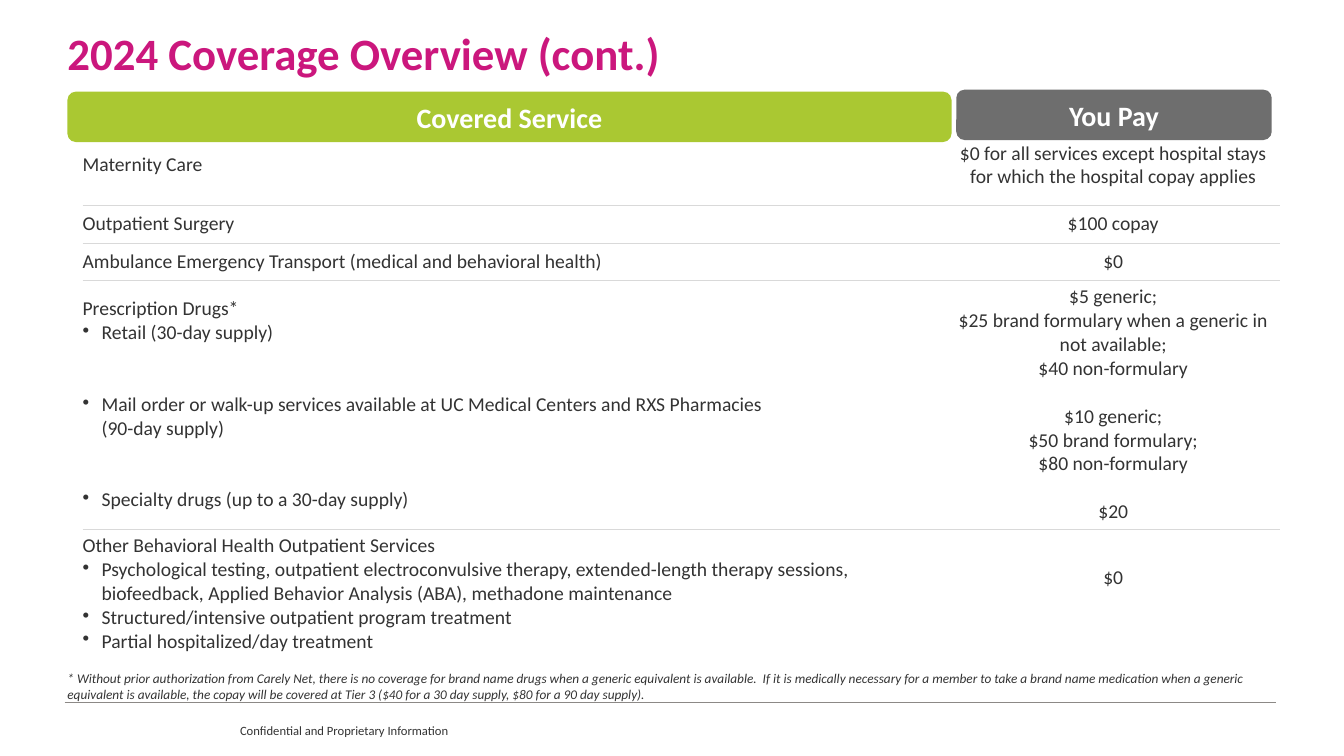
import pptx
import pptx.dml.color
import pptx.enum.shapes
import pptx.enum.text
import pptx.oxml
import pptx.oxml.ns
import pptx.util

Cm = pptx.util.Cm
Pt = pptx.util.Pt
RGBColor = pptx.dml.color.RGBColor
ALIGN = pptx.enum.text.PP_ALIGN
ANCHOR = pptx.enum.text.MSO_ANCHOR

MAGENTA = RGBColor(0xCB, 0x17, 0x7D)
GREEN = RGBColor(0xAA, 0xC8, 0x32)
GRAY = RGBColor(0x6E, 0x6E, 0x6E)
RULE = RGBColor(0x8C, 0x89, 0x86)
ROW_RULE = RGBColor(0xD9, 0xD9, 0xD9)
INK = RGBColor(0x33, 0x33, 0x33)
WHITE = RGBColor(0xFF, 0xFF, 0xFF)

FONT = "Calibri"
PLAIN_TABLE = "{2D5ABB26-0587-4C30-8999-92F81FD0307C}"
LINE = 17.1
COLUMNS = (21.77, 8.41)

# Each paragraph is (text, bulleted, blank lines above).
COVERAGE = [
    (2.03, [("Maternity Care", False, 0)],
     [("$0 for all services except hospital stays for which the hospital copay applies", False, 0)]),
    (0.94, [("Outpatient Surgery", False, 0)], [("$100 copay", False, 0)]),
    (0.94, [("Ambulance Emergency Transport (medical and behavioral health)", False, 0)],
     [("$0", False, 0)]),
    (6.27, [("Prescription Drugs*", False, 0),
            ("Retail (30-day supply)", True, 0),
            ("Mail order or walk-up services available at UC Medical Centers and RXS Pharmacies"
             "\v(90-day supply)", True, 2),
            ("Specialty drugs (up to a 30-day supply)", True, 2)],
     [("$5 generic;", False, 0),
      ("$25 brand formulary when a generic in not available;", False, 0),
      ("$40 non-formulary", False, 0),
      ("$10 generic;", False, 1),
      ("$50 brand formulary;", False, 0),
      ("$80 non-formulary", False, 0),
      ("$20", False, 1)]),
    (3.23, [("Other Behavioral Health Outpatient Services", False, 0),
            ("Psychological testing, outpatient electroconvulsive therapy, extended-length "
             "therapy sessions,\vbiofeedback, Applied Behavior Analysis (ABA), methadone "
             "maintenance", True, 0),
            ("Structured/intensive outpatient program treatment", True, 0),
            ("Partial hospitalized/day treatment", True, 0)],
     [("$0", False, 0)]),
]
FOOTNOTE = (
    "* Without prior authorization from Carely Net, there is no coverage for brand name drugs "
    "when a generic equivalent is available.  If it is medically necessary for a member to take "
    "a brand name medication when a generic\vequivalent is available, the copay will be covered "
    "at Tier 3 ($40 for a 30 day supply, $80 for a 90 day supply)."
)


def style(p, size, color, bold=False, italic=False):
    for r in p.runs:
        r.font.name = FONT
        r.font.size = Pt(size)
        r.font.color.rgb = color
        r.font.bold = bold
        r.font.italic = italic


def clear_margins(tf):
    tf.margin_left = tf.margin_right = tf.margin_top = tf.margin_bottom = 0


def add_title(s, left, top, width, height):
    sp = s.shapes.title
    sp.left, sp.top, sp.width, sp.height = Cm(left), Cm(top), Cm(width), Cm(height)
    tf = sp.text_frame
    tf.text = "2024 Coverage Overview (cont.)"
    tf.vertical_anchor = ANCHOR.TOP
    tf.auto_size = pptx.enum.text.MSO_AUTO_SIZE.NONE
    clear_margins(tf)
    p = tf.paragraphs[0]
    p.alignment = ALIGN.LEFT
    p.line_spacing = 0.9
    style(p, 32, MAGENTA, bold=True)


def add_heading(s, text, color, left, top, width, height):
    sp = s.shapes.add_shape(pptx.enum.shapes.MSO_SHAPE.ROUNDED_RECTANGLE,
                            Cm(left), Cm(top), Cm(width), Cm(height))
    sp.shadow.inherit = False
    sp.fill.solid()
    sp.fill.fore_color.rgb = color
    sp.line.fill.background()
    tf = sp.text_frame
    tf.text = text
    tf.vertical_anchor = ANCHOR.MIDDLE
    p = tf.paragraphs[0]
    p.alignment = ALIGN.CENTER
    style(p, 20, WHITE, bold=True)


def add_bullet(p):
    pPr = p._p.get_or_add_pPr()
    pPr.set("marL", str(Cm(0.48)))
    pPr.set("indent", str(-Cm(0.48)))
    pPr.append(pptx.oxml.parse_xml(
        f'<a:buChar {pptx.oxml.ns.nsdecls("a")} char="•"/>'))


def add_row_rule(cell):
    cell._tc.get_or_add_tcPr().insert(0, pptx.oxml.parse_xml(
        f'<a:lnB {pptx.oxml.ns.nsdecls("a")} w="{Pt(0.25)}"><a:solidFill>'
        f'<a:srgbClr val="{ROW_RULE}"/></a:solidFill></a:lnB>'))


def fill_cell(cell, items, align):
    cell.fill.background()
    cell.vertical_anchor = ANCHOR.MIDDLE
    tf = cell.text_frame
    for i, (text, bulleted, blank_lines) in enumerate(items):
        p = tf.add_paragraph() if i else tf.paragraphs[0]
        p.text = text
        p.alignment = align
        if blank_lines:
            p.space_before = Pt(blank_lines * LINE)
        if bulleted:
            add_bullet(p)
        style(p, 14, INK)


def add_coverage_table(s, left, top):
    width, height = sum(COLUMNS), sum(row[0] for row in COVERAGE)
    table = s.shapes.add_table(len(COVERAGE), len(COLUMNS), Cm(left), Cm(top),
                               Cm(width), Cm(height)).table
    table.first_row = table.horz_banding = False
    table._tbl.tblPr.find(pptx.oxml.ns.qn("a:tableStyleId")).text = PLAIN_TABLE
    for column, column_width in zip(table.columns, COLUMNS):
        column.width = Cm(column_width)
    for i, (row_height, service, cost) in enumerate(COVERAGE):
        table.rows[i].height = Cm(row_height)
        service_cell, cost_cell = table.cell(i, 0), table.cell(i, 1)
        service_cell.margin_left = 0
        fill_cell(service_cell, service, ALIGN.LEFT)
        fill_cell(cost_cell, cost, ALIGN.CENTER)
        if i < len(COVERAGE) - 1:
            add_row_rule(service_cell)
            add_row_rule(cost_cell)
    cost_cell.margin_bottom = Cm(0.89)


def add_note(s, text, size, left, top, width, height, italic=False):
    tf = s.shapes.add_textbox(Cm(left), Cm(top), Cm(width), Cm(height)).text_frame
    tf.word_wrap = True
    clear_margins(tf)
    tf.text = text
    style(tf.paragraphs[0], size, INK, italic=italic)


def add_footer(s, left, top, width):
    rule = s.shapes.add_connector(pptx.enum.shapes.MSO_CONNECTOR.STRAIGHT,
                                  Cm(left), Cm(top), Cm(left + width), Cm(top))
    rule.line.color.rgb = RULE
    rule.line.width = Pt(0.5)
    rule._element.spPr.append(pptx.oxml.parse_xml(
        f'<a:effectLst {pptx.oxml.ns.nsdecls("a")}/>'))
    add_note(s, "Confidential and Proprietary Information", 9,
             left + 4.42, top + 0.51, 11.43, 0.64)


def add_coverage_slide(prs):
    s = prs.slides.add_slide(prs.slide_layouts[5])
    add_footer(s, 1.63, 17.7, 30.53)
    add_title(s, 1.7, 0.79, 30.5, 2.79)
    add_coverage_table(s, 2.08, 3.15)
    add_heading(s, "Covered Service", GREEN, 1.7, 2.31, 22.28, 1.27)
    add_heading(s, "You Pay", GRAY, 24.1, 2.26, 7.95, 1.27)
    add_note(s, FOOTNOTE, 9.5, 1.7, 16.89, 30.84, 0.89, italic=True)


def main():
    prs = pptx.Presentation()
    prs.slide_width, prs.slide_height = Cm(33.87), Cm(19.05)
    add_coverage_slide(prs)
    prs.save("out.pptx")


if __name__ == "__main__":
    main()
